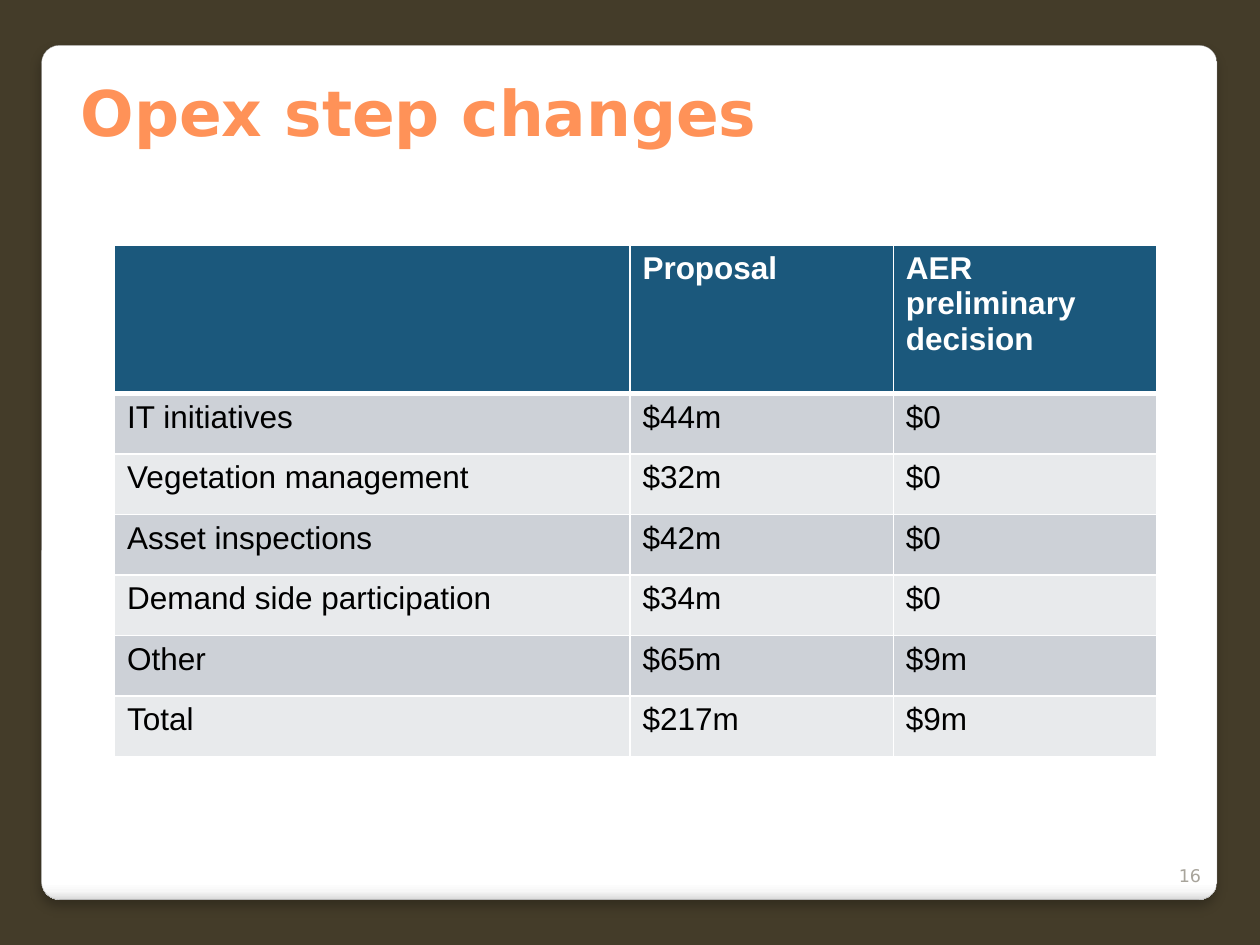
from dataclasses import dataclass

from lxml.etree import SubElement
from pptx import Presentation
from pptx.dml.color import RGBColor as RGB
from pptx.enum.shapes import MSO_SHAPE as Shape
from pptx.enum.text import MSO_ANCHOR as Anchor, MSO_AUTO_SIZE as AutoSize, PP_ALIGN as Align
from pptx.oxml import parse_xml
from pptx.oxml.ns import nsdecls, qn
from pptx.util import Emu, Inches, Pt


@dataclass(frozen=True)
class Theme:
    backdrop: str = "443C29"
    card_line: str = "A4A4A4"
    accent: str = "FF9258"
    muted: str = "A8A49B"
    header: str = "1B587C"
    bands: tuple = ("CDD1D7", "E8EAEC")
    white: str = "FFFFFF"
    black: str = "000000"
    card_stops: tuple = ((0, "FFFFFF"), (98, "FFFFFF"), (99, "F7F7F7"), (100, "DADADA"))
    heading_font: str = "DejaVu Sans"
    table_font: str = "Arial"
    title_size: int = 36
    table_size: int = 18
    number_size: int = 10
    rule: int = 1
    header_rule: int = 3


@dataclass(frozen=True)
class Box:
    x: float
    y: float
    w: float
    h: float

    def emu(self) -> tuple:
        return tuple(Emu(round(share * side)) for share, side in
                     zip((self.x, self.y, self.w, self.h), (WIDTH, HEIGHT) * 2))


@dataclass(frozen=True)
class StepChange:
    item: str
    proposal: str
    decision: str

    def texts(self) -> tuple:
        return self.item, self.proposal, self.decision


T = Theme()
WIDTH, HEIGHT = Inches(10), Inches(7.5)
CARD = Box(0.033, 0.048, 0.933, 0.904)
TITLE = Box(0.054, 0.069, 0.895, 0.095)
NUMBER = Box(0.913, 0.891, 0.05, 0.053)
TABLE = Box(0.091, 0.259, 0.827, 0.541)
COLUMNS = (4.09, 2.09, 2.09)
HEADER_ROW, BODY_ROW = 1.18, 0.48
HEADER = StepChange("", "Proposal", "AER preliminary decision")
CHANGES = (
    StepChange("IT initiatives", "$44m", "$0"),
    StepChange("Vegetation management", "$32m", "$0"),
    StepChange("Asset inspections", "$42m", "$0"),
    StepChange("Demand side participation", "$34m", "$0"),
    StepChange("Other", "$65m", "$9m"),
    StepChange("Total", "$217m", "$9m"),
)


def write(tf, text: str, *, size: int, color: str, font: str, bold: bool = False,
          align=Align.LEFT, anchor=Anchor.TOP) -> None:
    tf.word_wrap = True
    tf.vertical_anchor = anchor
    p = tf.paragraphs[0]
    p.alignment = align
    r = p.add_run()
    r.text = text
    r.font.size, r.font.name, r.font.bold = Pt(size), font, bold
    r.font.color.rgb = RGB.from_string(color)


def add_card(s) -> None:
    sp = s.shapes.add_shape(Shape.ROUNDED_RECTANGLE, *CARD.emu())
    sp.adjustments[0] = 0.021
    sp.line.color.rgb = RGB.from_string(T.card_line)
    sp.line.width = Pt(0.16)
    stops = "".join(f'<a:gs pos="{pos * 1000}"><a:srgbClr val="{color}"/></a:gs>'
                    for pos, color in T.card_stops)
    props = sp._element.spPr
    props.find(qn("a:prstGeom")).addnext(parse_xml(
        f'<a:gradFill {nsdecls("a")}><a:gsLst>{stops}</a:gsLst>'
        '<a:lin ang="5400000" scaled="0"/></a:gradFill>'))
    props.append(parse_xml(
        f'<a:effectLst {nsdecls("a")}><a:outerShdw blurRad="{Pt(6)}" dist="{Pt(4)}" '
        f'dir="5400000" algn="t" rotWithShape="0"><a:srgbClr val="{T.black}">'
        '<a:alpha val="25000"/></a:srgbClr></a:outerShdw></a:effectLst>'))


def add_title(s, text: str) -> None:
    title = s.shapes.title
    title.left, title.top, title.width, title.height = TITLE.emu()
    title.text_frame.auto_size = AutoSize.NONE
    write(title.text_frame, text, size=T.title_size, color=T.accent,
          font=T.heading_font, bold=True, anchor=Anchor.BOTTOM)
    s.shapes._spTree.append(title._element)


def add_number(s, text: str) -> None:
    tf = s.shapes.add_textbox(*NUMBER.emu()).text_frame
    write(tf, text, size=T.number_size, color=T.muted, font=T.heading_font,
          align=Align.RIGHT, anchor=Anchor.BOTTOM)


def set_borders(cell, top: int, bottom: int) -> None:
    props = cell._tc.get_or_add_tcPr()
    for side, width in (("L", T.rule), ("R", T.rule), ("T", top), ("B", bottom)):
        line = SubElement(props, qn(f"a:ln{side}"), w=str(Pt(width)))
        fill = SubElement(line, qn("a:solidFill"))
        SubElement(fill, qn("a:srgbClr"), val=T.white)


def add_table(s) -> None:
    rows = (HEADER, *CHANGES)
    table = s.shapes.add_table(len(rows), len(COLUMNS), *TABLE.emu()).table
    for column, width in zip(table.columns, COLUMNS):
        column.width = Inches(width)
    for i, change in enumerate(rows):
        is_header = i == 0
        table.rows[i].height = Inches(HEADER_ROW if is_header else BODY_ROW)
        for j, text in enumerate(change.texts()):
            cell = table.cell(i, j)
            set_borders(cell, T.header_rule if i == 1 else T.rule,
                        T.header_rule if is_header else T.rule)
            cell.fill.solid()
            cell.fill.fore_color.rgb = RGB.from_string(
                T.header if is_header else T.bands[(i - 1) % 2])
            if text:
                write(cell.text_frame, text, size=T.table_size, font=T.table_font,
                      color=T.white if is_header else T.black, bold=is_header)


def main() -> None:
    prs = Presentation()
    prs.slide_width, prs.slide_height = WIDTH, HEIGHT
    s = prs.slides.add_slide(prs.slide_layouts[5])
    s.background.fill.solid()
    s.background.fill.fore_color.rgb = RGB.from_string(T.backdrop)
    add_card(s)
    add_number(s, "16")
    add_title(s, "Opex step changes")
    add_table(s)
    prs.save("out.pptx")


if __name__ == "__main__":
    main()
